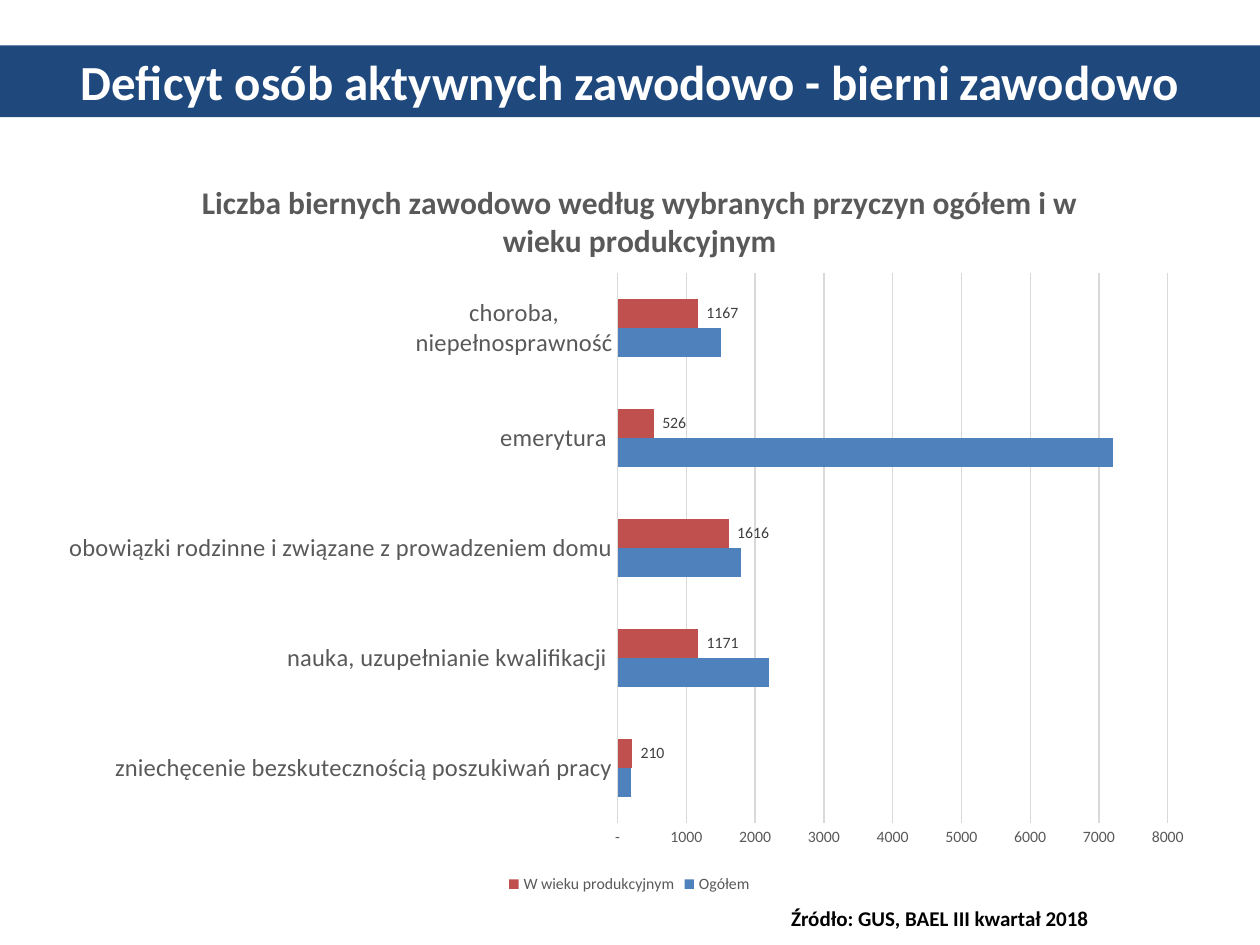
from dataclasses import dataclass

from lxml.etree import SubElement
from pptx import Presentation
from pptx.chart.data import CategoryChartData
from pptx.dml.color import RGBColor
from pptx.enum.chart import XL_CHART_TYPE as ChartType
from pptx.enum.chart import XL_LABEL_POSITION as LabelPosition
from pptx.enum.chart import XL_LEGEND_POSITION as LegendPosition
from pptx.enum.chart import XL_TICK_MARK as TickMark
from pptx.enum.shapes import MSO_SHAPE as Shape
from pptx.enum.text import MSO_ANCHOR as Anchor
from pptx.enum.text import PP_ALIGN as Align
from pptx.oxml.ns import qn
from pptx.util import Inches, Pt

NAVY = RGBColor(0x1F, 0x49, 0x7D)
WHITE = RGBColor(0xFF, 0xFF, 0xFF)
BLACK = RGBColor(0x00, 0x00, 0x00)
GREY = RGBColor(0x59, 0x59, 0x59)
DARK_GREY = RGBColor(0x40, 0x40, 0x40)
GRID = RGBColor(0xD9, 0xD9, 0xD9)
BLUE = RGBColor(0x4F, 0x81, 0xBD)
RED = RGBColor(0xC0, 0x50, 0x4D)
NUMBER_FORMAT = '_-* ####_-;\\-* ####_-;_-* "-"_-;_-@_-'


@dataclass(frozen=True)
class Population:
    name: str
    counts: tuple[int, ...]
    color: RGBColor
    labelled: bool


REASONS = (
    "zniechęcenie bezskutecznością poszukiwań pracy",
    "nauka, uzupełnianie kwalifikacji ",
    "obowiązki rodzinne i związane z prowadzeniem domu",
    "emerytura ",
    "choroba,\nniepełnosprawność",
)
POPULATIONS = (
    Population("Ogółem", (200, 2200, 1800, 7200, 1500), BLUE, False),
    Population("W wieku produkcyjnym", (210, 1171, 1616, 526, 1167), RED, True),
)


def set_all(target, **values) -> None:
    for attribute, value in values.items():
        setattr(target, attribute, value)


def set_font(font, size: float, color: RGBColor, bold: bool = False) -> None:
    set_all(font, name="Calibri", size=Pt(size), bold=bold)
    font.color.rgb = color


def set_line(line) -> None:
    line.color.rgb = GRID
    line.width = Pt(0.75)


def place(element, **fractions: float) -> None:
    """Fix a chart part at fractions of the chart's width and height."""
    layout = element.find(qn("c:layout"))
    if layout is None:
        layout = SubElement(element, qn("c:layout"))
        element.remove(layout)
        before = element.find(qn("c:tx"))
        element.insert(0 if before is None else element.index(before) + 1, layout)
    for child in list(layout):
        layout.remove(child)
    manual = SubElement(layout, qn("c:manualLayout"))
    if "w" in fractions:
        SubElement(manual, qn("c:layoutTarget")).set("val", "inner")
    for side in ("x", "y"):
        SubElement(manual, qn(f"c:{side}Mode")).set("val", "edge")
    for key, value in fractions.items():
        SubElement(manual, qn(f"c:{key}")).set("val", str(value))


def add_banner(slide) -> None:
    banner = slide.shapes.add_shape(
        Shape.RECTANGLE, Inches(0), Inches(0.36), Inches(10), Inches(0.57))
    banner.shadow.inherit = False
    banner.fill.solid()
    banner.fill.fore_color.rgb = NAVY
    banner.line.fill.background()
    set_all(banner.text_frame, word_wrap=True, vertical_anchor=Anchor.MIDDLE)
    heading = banner.text_frame.paragraphs[0]
    heading.alignment = Align.CENTER
    for text, size in (("Deficyt osób aktywnych zawodowo - bierni", 28),
                       (" ", 24), ("zawodowo", 28)):
        run = heading.add_run()
        run.text = text
        set_font(run.font, size, WHITE, bold=True)


def add_citation(slide) -> None:
    citation = slide.shapes.add_textbox(
        Inches(6.18), Inches(7.14), Inches(3.07), Inches(0.3))
    citation.text_frame.word_wrap = True
    run = citation.text_frame.paragraphs[0].add_run()
    run.text = "Źródło: GUS, BAEL III kwartał 2018"
    set_font(run.font, 12, BLACK, bold=True)


def style_axes(chart) -> None:
    reasons, counts = chart.category_axis, chart.value_axis
    for axis, size in ((reasons, 14), (counts, 9)):
        set_all(axis, major_tick_mark=TickMark.NONE, minor_tick_mark=TickMark.NONE)
        set_font(axis.tick_labels.font, size, GREY)
    set_line(reasons.format.line)
    set_all(counts, minimum_scale=0, maximum_scale=8000, major_unit=1000,
            has_major_gridlines=True)
    set_line(counts.major_gridlines.format.line)
    counts.format.line.fill.background()
    set_all(counts.tick_labels, number_format=NUMBER_FORMAT,
            number_format_is_linked=False)


def style_bars(plot) -> None:
    set_all(plot, gap_width=182, overlap=0, vary_by_categories=False)
    for population, bars in zip(POPULATIONS, plot.series):
        bars.format.fill.solid()
        bars.format.fill.fore_color.rgb = population.color
        bars.invert_if_negative = False
        if population.labelled:
            set_all(bars.data_labels, show_value=True,
                    position=LabelPosition.OUTSIDE_END,
                    number_format=NUMBER_FORMAT, number_format_is_linked=False)
            set_font(bars.data_labels.font, 9, DARK_GREY)


def add_reasons_chart(slide) -> None:
    chart_data = CategoryChartData()
    chart_data.categories = REASONS
    for population in POPULATIONS:
        chart_data.add_series(population.name, population.counts)
    chart = slide.shapes.add_chart(
        ChartType.BAR_CLUSTERED, Inches(0.35), Inches(1.15),
        Inches(9.29), Inches(5.98), chart_data).chart
    set_font(chart.font, 10, BLACK)

    title = chart.chart_title.text_frame.paragraphs[0].add_run()
    title.text = ("Liczba biernych zawodowo według wybranych przyczyn "
                  "ogółem i w wieku produkcyjnym")
    set_font(title.font, 18, GREY, bold=True)
    place(chart.chart_title._element, x=0.13, y=0.04)

    chart.has_legend = True
    set_all(chart.legend, position=LegendPosition.BOTTOM, include_in_layout=False)
    set_font(chart.legend.font, 9, GREY)

    style_axes(chart)
    style_bars(chart.plots[0])
    plot_area = chart._chartSpace.chart.plotArea
    place(plot_area, x=0.49, y=0.17, w=0.47, h=0.73)


def main() -> None:
    presentation = Presentation()
    set_all(presentation, slide_width=Inches(10), slide_height=Inches(7.5))
    slide = presentation.slides.add_slide(presentation.slide_layouts[6])
    add_citation(slide)
    add_banner(slide)
    add_reasons_chart(slide)
    presentation.save("out.pptx")


if __name__ == "__main__":
    main()
